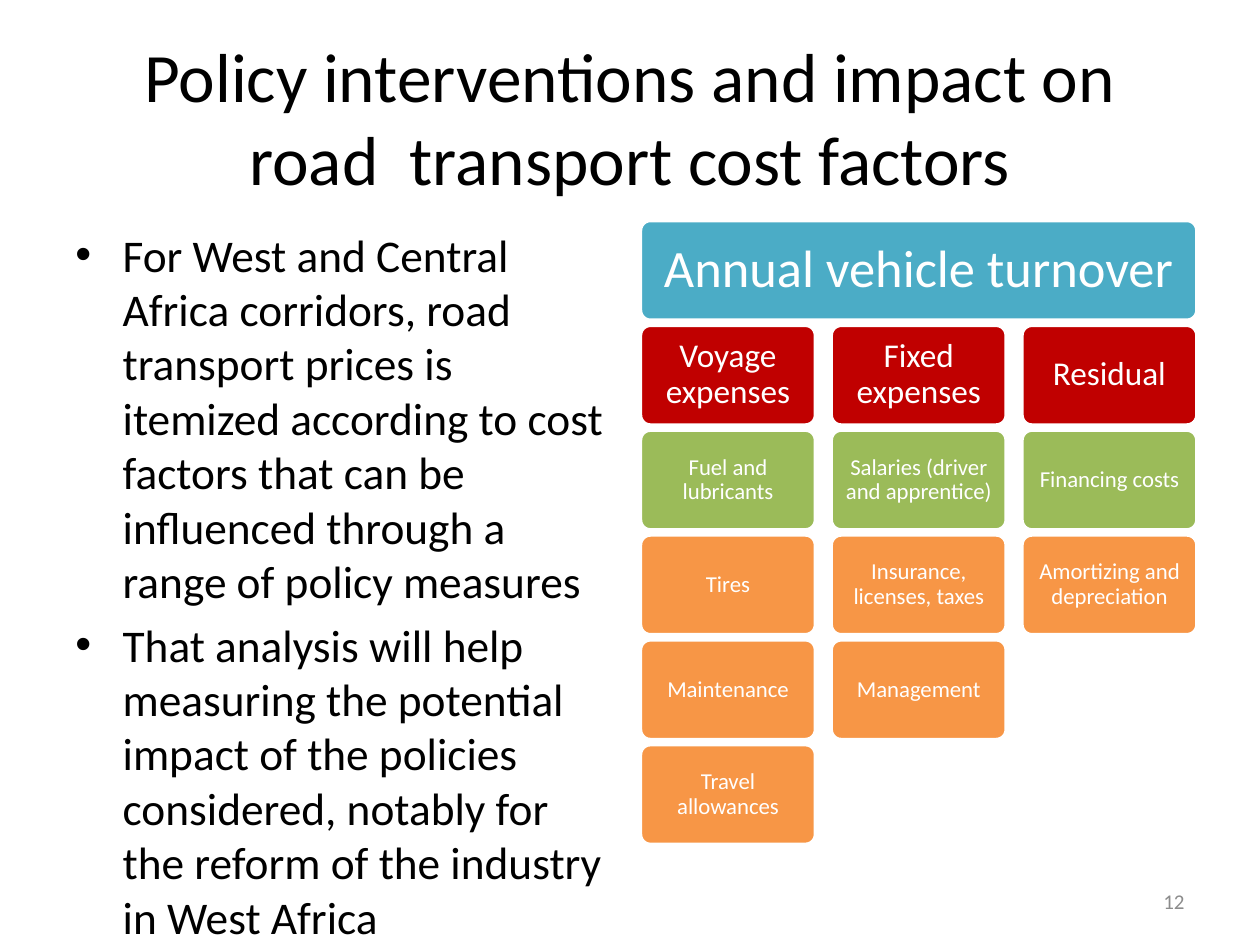
from lxml import etree
from pptx import Presentation
from pptx.dml.color import RGBColor
from pptx.enum.shapes import MSO_SHAPE
from pptx.enum.text import MSO_ANCHOR, PP_ALIGN
from pptx.oxml.ns import qn
from pptx.util import Pt

ROUNDED = MSO_SHAPE.ROUNDED_RECTANGLE
TOP, MIDDLE = MSO_ANCHOR.TOP, MSO_ANCHOR.MIDDLE
LEFT, CENTER, RIGHT = PP_ALIGN.LEFT, PP_ALIGN.CENTER, PP_ALIGN.RIGHT

# Content
FONT = "Calibri"
TITLE = "Policy interventions and impact on road  transport cost factors"
BULLETS = [
    "For West and Central Africa corridors, road transport prices is itemized "
    "according to cost factors that can be influenced through a range of "
    "policy measures",
    "That analysis will help measuring the potential impact of the policies "
    "considered, notably for the reform of the industry in West Africa",
]
SLIDE_NUMBER = "12"
TURNOVER = "Annual vehicle turnover"
COST_COLUMNS = [
    ["Voyage expenses", "Fuel and lubricants", "Tires", "Maintenance",
     "Travel allowances"],
    ["Fixed expenses", "Salaries (driver and apprentice)",
     "Insurance, licenses, taxes", "Management"],
    ["Residual", "Financing costs", "Amortizing and depreciation"],
]

# Fill, text size and inset of each level, from the top down
TURNOVER_STYLE = ("4BACC6", 30, 9)
HEADING_STYLE = ("C00000", 19, 5.7)
FIRST_ITEM_STYLE = ("9BBB59", 13, 3.9)
ITEM_STYLE = ("F79646", 13, 3.9)

# Box grid
GRID_LEFT, GRID_TOP = 366, 126
BOX_WIDTH, BOX_HEIGHT = 100, 57
COLUMN_STEP, ROW_STEP = 109, 59.9


def color(value):
    return RGBColor.from_string(value)


def add_text(paragraph, text, size, text_color, align):
    paragraph.alignment = align
    run = paragraph.add_run()
    run.text = text
    run.font.name = FONT
    run.font.size = Pt(size)
    run.font.color.rgb = color(text_color)


def add_text_box(slide, box, anchor):
    shape = slide.shapes.add_textbox(*map(Pt, box))
    shape.text_frame.word_wrap = True
    shape.text_frame.vertical_anchor = anchor
    return shape.text_frame


def add_bullet(paragraph, indent):
    properties = paragraph._p.get_or_add_pPr()
    properties.set("marL", str(Pt(indent)))
    properties.set("indent", str(-Pt(indent)))
    etree.SubElement(properties, qn("a:buFont")).set("typeface", "Arial")
    etree.SubElement(properties, qn("a:buChar")).set("char", "•")


def add_box(slide, text, column, row, span, style):
    fill, size, inset = style
    shape = slide.shapes.add_shape(
        ROUNDED,
        Pt(GRID_LEFT + column * COLUMN_STEP), Pt(GRID_TOP + row * ROW_STEP),
        Pt(BOX_WIDTH + (span - 1) * COLUMN_STEP), Pt(BOX_HEIGHT))
    shape.adjustments[0] = 0.1
    shape.shadow.inherit = False
    shape.fill.solid()
    shape.fill.fore_color.rgb = color(fill)
    shape.line.color.rgb = color("FFFFFF")
    shape.line.width = Pt(2)
    frame = shape.text_frame
    frame.word_wrap = True
    frame.vertical_anchor = MIDDLE
    frame.margin_left = frame.margin_right = Pt(inset)
    frame.margin_top = frame.margin_bottom = Pt(inset)
    paragraph = frame.paragraphs[0]
    paragraph.line_spacing = 0.9
    add_text(paragraph, text, size, "FFFFFF", CENTER)


def main():
    presentation = Presentation()
    presentation.slide_width, presentation.slide_height = Pt(720), Pt(540)
    slide = presentation.slides.add_slide(presentation.slide_layouts[6])

    # Title
    paragraph = add_text_box(slide, (36, 21.6, 648, 90), MIDDLE).paragraphs[0]
    paragraph.line_spacing = Pt(47.4)
    add_text(paragraph, TITLE, 39.6, "000000", CENTER)

    # Bullets
    frame = add_text_box(slide, (36, 126, 318, 356.4), TOP)
    for index, text in enumerate(BULLETS):
        paragraph = frame.add_paragraph() if index else frame.paragraphs[0]
        add_bullet(paragraph, 27)
        paragraph.line_spacing = Pt(31.1)
        paragraph.space_before = Pt(5.2 if index else 0)
        add_text(paragraph, text, 25.9, "000000", LEFT)

    # Cost breakdown
    add_box(slide, TURNOVER, 0, 0, len(COST_COLUMNS), TURNOVER_STYLE)
    leading_styles = [HEADING_STYLE, FIRST_ITEM_STYLE]
    for column, labels in enumerate(COST_COLUMNS):
        for level, label in enumerate(labels):
            style = (leading_styles[level] if level < len(leading_styles)
                     else ITEM_STYLE)
            add_box(slide, label, column, level + 1, 1, style)

    # Slide number
    frame = add_text_box(slide, (516, 500.5, 168, 28.8), MIDDLE)
    add_text(frame.paragraphs[0], SLIDE_NUMBER, 12, "8C8C8C", RIGHT)

    presentation.save("out.pptx")


if __name__ == "__main__":
    main()
